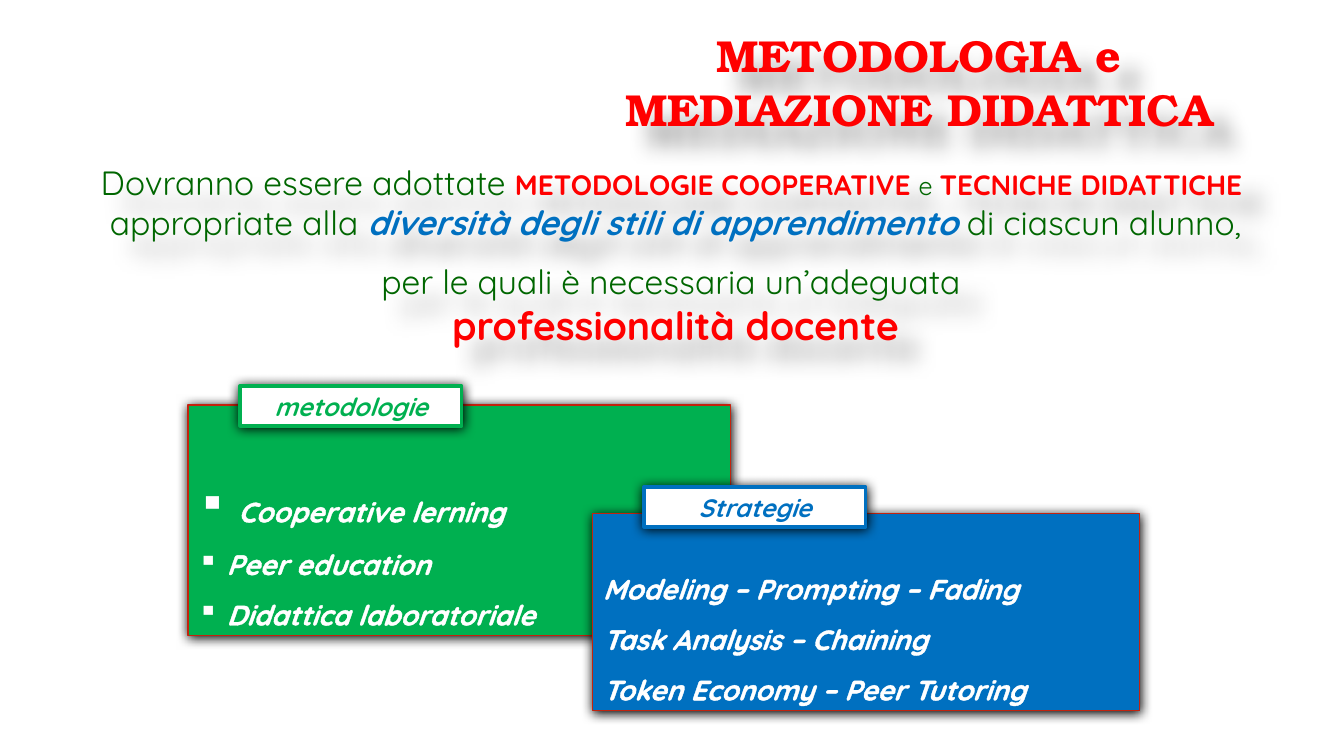
from dataclasses import dataclass

from lxml.etree import SubElement
from pptx import Presentation
from pptx.dml.color import RGBColor
from pptx.enum.shapes import MSO_SHAPE
from pptx.enum.text import MSO_ANCHOR, PP_ALIGN
from pptx.oxml import parse_xml
from pptx.oxml.ns import nsdecls, qn
from pptx.util import Pt

PX = 12192000 / 1344


@dataclass(frozen=True)
class Theme:
    red: str = "FF0000"
    green: str = "00B050"
    dark_green: str = "006600"
    blue: str = "0070C0"
    border: str = "C4220D"
    white: str = "FFFFFF"
    black: str = "000000"
    title_font: str = "TeX Gyre Bonum"
    body_font: str = "Quicksand"
    title: int = 32
    key: int = 28
    body: int = 24
    strong: int = 20
    small: int = 18


theme = Theme()


def add_span(para, text, size, color, bold=False, italic=False, name=theme.body_font):
    span = para.add_run()
    span.text = text
    font = span.font
    font.name, font.size, font.bold, font.italic = name, Pt(size), bold, italic
    font.color.rgb = RGBColor.from_string(color)
    return span


def add_shadow(shape, blur, distance, degrees, alpha):
    """Put an outer black shadow on the shape; blur and distance are points."""
    shape.shadow.inherit = False
    effects = shape._element.spPr.find(qn("a:effectLst"))
    effects.append(parse_xml(
        f'<a:outerShdw {nsdecls("a")} blurRad="{Pt(blur)}" dist="{Pt(distance)}" '
        f'dir="{degrees * 60000}" algn="ctr" rotWithShape="0"><a:srgbClr val="{theme.black}">'
        f'<a:alpha val="{alpha * 1000}"/></a:srgbClr></a:outerShdw>'))


deck = Presentation()
deck.slide_width, deck.slide_height = round(1344 * PX), round(756 * PX)
page = deck.slides.add_slide(deck.slide_layouts[6])

# Coloured panels with their lists
panels = [
    ((188, 405, 543, 231), theme.green, "▪",
     ["Cooperative lerning", "Peer education", "Didattica laboratoriale"]),
    ((593, 514, 547, 197), theme.blue, None,
     ["Modeling – Prompting – Fading", "Task Analysis – Chaining",
      "Token Economy – Peer Tutoring"]),
]
for place, color, bullet, items in panels:
    panel = page.shapes.add_shape(MSO_SHAPE.RECTANGLE, *(round(n * PX) for n in place))
    panel.fill.solid()
    panel.fill.fore_color.rgb = RGBColor.from_string(color)
    panel.line.color.rgb = RGBColor.from_string(theme.border)
    panel.line.width = Pt(0.75)
    add_shadow(panel, 8.5, 1, 90, 100)
    frame = panel.text_frame
    frame.word_wrap = True
    frame.vertical_anchor = MSO_ANCHOR.BOTTOM
    for index, item in enumerate(items):
        para = frame.add_paragraph() if index else frame.paragraphs[0]
        para.alignment = PP_ALIGN.LEFT
        para.line_spacing = 1.5
        spans = []
        if bullet:
            props = para._p.get_or_add_pPr()
            props.set("marL", "0")
            props.set("indent", "0")
            SubElement(props, qn("a:buChar"), char=bullet)
            lead_size = theme.strong if index else theme.key
            spans.append(add_span(para, " ", lead_size, theme.white, True, True))
        spans.append(add_span(para, item, theme.strong, theme.white, True, True))
        for span in spans:
            span._r.get_or_add_rPr().insert(0, parse_xml(
                f'<a:ln {nsdecls("a")} w="{Pt(0.83)}"><a:solidFill>'
                f'<a:srgbClr val="{theme.white}"/></a:solidFill></a:ln>'))

# Title and introduction
title_lines = [
    [(text, theme.title, theme.red, True, False, theme.title_font)]
    for text in ("METODOLOGIA e", "MEDIAZIONE DIDATTICA")
]
intro_lines = [
    [("Dovranno essere adottate ", theme.body, theme.dark_green),
     ("METODOLOGIE COOPERATIVE ", theme.strong, theme.red, True),
     ("e ", theme.small, theme.dark_green),
     ("TECNICHE DIDATTICHE ", theme.strong, theme.red, True)],
    [("appropriate alla ", theme.body, theme.dark_green),
     ("diversità degli stili di apprendimento ", theme.body, theme.blue, True, True),
     ("di ciascun alunno,", theme.body, theme.dark_green)],
    [("per le quali è necessaria un’adeguata ", theme.body, theme.dark_green)],
    [("professionalità docente", theme.key, theme.red, True)],
]
for place, lines in [((553, 23, 732, 119), title_lines), ((34, 157, 1283, 201), intro_lines)]:
    box = page.shapes.add_textbox(*(round(n * PX) for n in place))
    add_shadow(box, 15, 20, 45, 35)
    frame = box.text_frame
    frame.word_wrap = True
    for index, line in enumerate(lines):
        para = frame.add_paragraph() if index else frame.paragraphs[0]
        para.alignment = PP_ALIGN.CENTER
        if index == 2:
            para.space_before = Pt(13)
        for part in line:
            add_span(para, *part)

# Name tags on the panels
for left, top, text, color in [(240, 386, "metodologie", theme.green),
                               (644, 487, "Strategie", theme.blue)]:
    tag = page.shapes.add_shape(
        MSO_SHAPE.RECTANGLE, *(round(n * PX) for n in (left, top, 222, 40)))
    tag.fill.solid()
    tag.fill.fore_color.rgb = RGBColor.from_string(theme.white)
    tag.line.color.rgb = RGBColor.from_string(color)
    tag.line.width = Pt(2.25)
    add_shadow(tag, 8.5, 1, 90, 100)
    frame = tag.text_frame
    frame.word_wrap = True
    frame.vertical_anchor = MSO_ANCHOR.MIDDLE
    para = frame.paragraphs[0]
    para.alignment = PP_ALIGN.CENTER
    add_span(para, text, theme.small, color, True, True)

deck.save("out.pptx")
